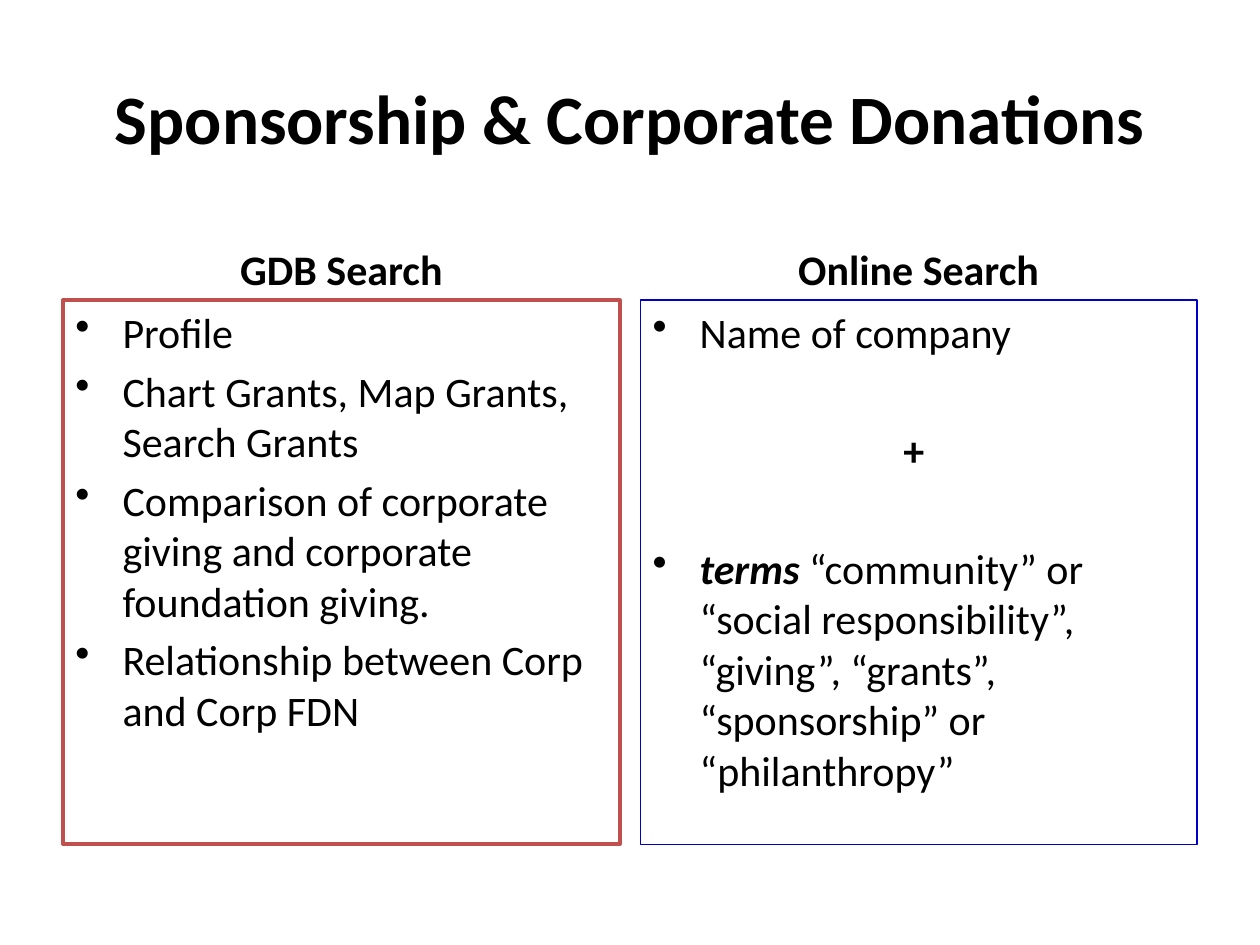
import dataclasses
import pptx
import pptx.dml.color
import pptx.enum.shapes
import pptx.enum.text
import pptx.oxml.ns
import pptx.util
from lxml import etree

Cm = pptx.util.Cm
Pt = pptx.util.Pt
RGB = pptx.dml.color.RGBColor
Align = pptx.enum.text.PP_ALIGN
Anchor = pptx.enum.text.MSO_ANCHOR


@dataclasses.dataclass(frozen=True)
class Theme:
    font: str = "Calibri"
    ink: RGB = RGB(0x00, 0x00, 0x00)
    paper: RGB = RGB(0xFF, 0xFF, 0xFF)
    red: RGB = RGB(0xC0, 0x50, 0x4D)
    blue: RGB = RGB(0x00, 0x00, 0xCC)
    title_size: float = 39.6
    body_size: float = 24
    near_gap: float = 4.8
    wide_gap: float = 38.7


THEME = Theme()
HANG = Cm(0.95)

COLUMNS = [
    {
        "heading": "GDB Search",
        "fill": THEME.paper,
        "line": THEME.red,
        "weight": 2,
        "items": [
            {"spans": [("Profile", {})]},
            {"spans": [("Chart Grants, Map Grants, Search Grants", {})]},
            {"spans": [("Comparison of corporate giving and corporate foundation giving.", {})]},
            {"spans": [("Relationship between Corp and Corp FDN", {})]},
        ],
    },
    {
        "heading": "Online Search",
        "fill": None,
        "line": THEME.blue,
        "weight": 0.75,
        "items": [
            {"spans": [("Name of company", {})]},
            {"spans": [("+ ", {"bold": True})], "bullet": False, "gap": THEME.wide_gap},
            {
                "spans": [
                    ("terms", {"bold": True, "italic": True}),
                    (" “community” or “social responsibility”, “giving”, “grants”, "
                     "“sponsorship” or “philanthropy”", {}),
                ],
                "gap": THEME.wide_gap,
            },
        ],
    },
]


def set_format(target, values):
    for name, value in values.items():
        setattr(target, name, value)


def style_font(font, size, **extra):
    set_format(font, {"name": THEME.font, "size": Pt(size), **extra})
    font.color.rgb = THEME.ink


def add_bullet(para):
    properties = para._p.get_or_add_pPr()
    properties.set("marL", str(HANG))
    properties.set("indent", str(-HANG))
    bullet = etree.SubElement(properties, pptx.oxml.ns.qn("a:buChar"))
    bullet.set("char", "•")


def write_heading(shape, text, size, anchor):
    set_format(shape.text_frame, {"word_wrap": True, "vertical_anchor": anchor})
    para = shape.text_frame.paragraphs[0]
    para.alignment = Align.CENTER
    span = para.add_run()
    span.text = text
    style_font(span.font, size, bold=True)


def write_items(frame, items):
    set_format(frame, {"word_wrap": True, "vertical_anchor": Anchor.TOP})
    for index, item in enumerate(items):
        para = frame.add_paragraph() if index else frame.paragraphs[0]
        bulleted = item.get("bullet", True)
        para.alignment = Align.LEFT if bulleted else Align.CENTER
        if index:
            para.space_before = Pt(item.get("gap", THEME.near_gap))
        if bulleted:
            add_bullet(para)
        for text, emphasis in item["spans"]:
            span = para.add_run()
            span.text = text
            style_font(span.font, THEME.body_size, **emphasis)


def place_title(page, left, top, width, height):
    title = page.shapes.title
    set_format(title, {"left": left, "top": top, "width": width, "height": height})
    write_heading(title, "Sponsorship & Corporate Donations", THEME.title_size, Anchor.MIDDLE)


def place_column(page, column, left, top, width, height):
    heading_height = Cm(1.78)
    heading = page.shapes.add_textbox(left, top, width, heading_height)
    write_heading(heading, column["heading"], THEME.body_size, Anchor.BOTTOM)

    box = page.shapes.add_shape(
        pptx.enum.shapes.MSO_SHAPE.RECTANGLE,
        left, top + heading_height, width, height - heading_height,
    )
    box.shadow.inherit = False
    if column["fill"] is None:
        box.fill.background()
    else:
        box.fill.solid()
        box.fill.fore_color.rgb = column["fill"]
    box.line.color.rgb = column["line"]
    box.line.width = Pt(column["weight"])
    write_items(box.text_frame, column["items"])


def build_page(deck):
    page = deck.slides.add_slide(deck.slide_layouts[5])
    margin = Cm(1.27)
    gutter = Cm(0.41)
    content_width = deck.slide_width - 2 * margin
    column_width = (content_width - gutter) // len(COLUMNS)
    place_title(page, margin, Cm(0.76), content_width, Cm(3.18))
    for index, column in enumerate(COLUMNS):
        left = margin + index * (column_width + gutter)
        place_column(page, column, left, Cm(4.27), column_width, Cm(12.75))


def main():
    deck = pptx.Presentation()
    set_format(deck, {"slide_width": Cm(25.4), "slide_height": Cm(19.05)})
    build_page(deck)
    deck.save("out.pptx")


if __name__ == "__main__":
    main()
